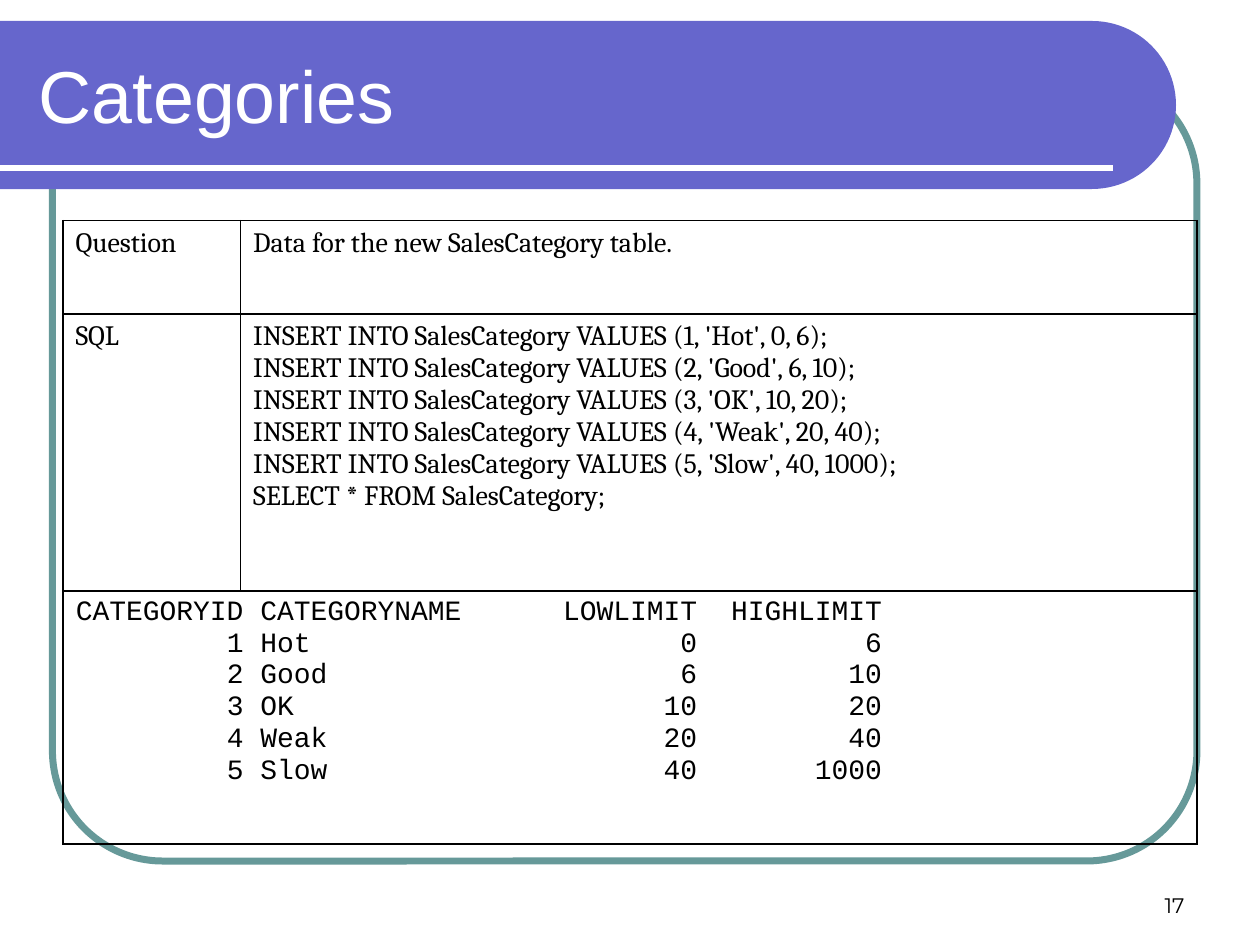
from math import cos, pi, sin

from lxml.etree import SubElement
from pptx import Presentation
from pptx.dml.color import RGBColor
from pptx.enum.shapes import MSO_CONNECTOR, MSO_SHAPE
from pptx.enum.text import MSO_ANCHOR, PP_ALIGN
from pptx.oxml.ns import qn
from pptx.util import Pt

BLACK = RGBColor(0x00, 0x00, 0x00)
WHITE = RGBColor(0xFF, 0xFF, 0xFF)
TEAL = RGBColor(0x66, 0x99, 0x99)
VIOLET = RGBColor(0x66, 0x66, 0xCC)

TITLE = {"name": "Arial", "size": Pt(42), "color": WHITE}
NUMBER = {"name": "Montserrat", "size": Pt(12), "color": BLACK}
PROSE = {"name": "Cambria", "size": Pt(16), "color": BLACK}
CODE = {"name": "Courier New", "size": Pt(16), "color": BLACK}
HANGING = 27
CODE_CHAR = 9.6  # width of one 16 pt Courier character

# Each result column: alignment and the character position of its edge
RESULT_STOPS = [("r", 10), ("l", 11), ("r", 37), ("r", 48)]
RESULT_ROWS = [
    ("CATEGORYID", "CATEGORYNAME", "LOWLIMIT", "HIGHLIMIT"),
    ("1", "Hot", "0", "6"),
    ("2", "Good", "6", "10"),
    ("3", "OK", "10", "20"),
    ("4", "Weak", "20", "40"),
    ("5", "Slow", "40", "1000"),
]
INSERTS = [
    f"INSERT INTO SalesCategory VALUES ({number}, '{name}', {low}, {high});"
    for number, name, low, high in RESULT_ROWS[1:]
]


class SlideBuilder:
    def __init__(self, slide):
        self.slide = slide
        self.shapes = slide.shapes

    def set_text(self, frame, lines, style, align=PP_ALIGN.LEFT):
        frame.text = "\n".join(lines)
        for paragraph in frame.paragraphs:
            paragraph.alignment = align
            for run in paragraph.runs:
                for key, value in style.items():
                    if key == "color":
                        run.font.color.rgb = value
                    else:
                        setattr(run.font, key, value)

    def frame(self, left, top, width, height, radius):
        border = self.shapes.add_shape(
            MSO_SHAPE.ROUNDED_RECTANGLE, Pt(left), Pt(top), Pt(width), Pt(height))
        border.adjustments[0] = radius
        border.shadow.inherit = False
        border.fill.background()
        border.line.color.rgb = TEAL
        border.line.width = Pt(4)

    def banner(self, top, bottom, right, steps=48):
        """Band from the left slide edge with a half-round right end."""
        radius = (bottom - top) / 2
        angles = [pi * (step / steps - 0.5) for step in range(steps + 1)]
        arc = [(right - radius + radius * cos(a), top + radius + radius * sin(a))
               for a in angles]
        outline = self.shapes.build_freeform(0, Pt(top))
        outline.add_line_segments(
            [(Pt(x), Pt(y)) for x, y in arc + [(0, bottom)]], close=True)
        band = outline.convert_to_shape()
        band.shadow.inherit = False
        band.fill.solid()
        band.fill.fore_color.rgb = VIOLET
        band.line.fill.background()

    def rule(self, y, right):
        line = self.shapes.add_connector(
            MSO_CONNECTOR.STRAIGHT, 0, Pt(y), Pt(right), Pt(y))
        line.line.color.rgb = WHITE
        line.line.width = Pt(3)
        SubElement(line._element.spPr, qn("a:effectLst"))

    def title(self, text, left, top, width, height):
        heading = self.shapes.title
        place = {"left": left, "top": top, "width": width, "height": height}
        for side, length in place.items():
            setattr(heading, side, Pt(length))
        self.set_text(heading.text_frame, [text], TITLE)
        heading.text_frame.vertical_anchor = MSO_ANCHOR.MIDDLE
        # Drawn above the banner
        self.shapes._spTree.append(heading._element)

    def page_number(self, text, left, top, width, height):
        box = self.shapes.add_textbox(Pt(left), Pt(top), Pt(width), Pt(height))
        box.text_frame.word_wrap = True
        box.text_frame.vertical_anchor = MSO_ANCHOR.BOTTOM
        self.set_text(box.text_frame, [text], NUMBER, PP_ALIGN.RIGHT)

    def table(self, left, top, widths, heights):
        graphic = self.shapes.add_table(
            len(heights), len(widths), Pt(left), Pt(top),
            Pt(sum(widths)), Pt(sum(heights)))
        grid = graphic.table
        grid.first_row = grid.horz_banding = False
        for column, width in zip(grid.columns, widths):
            column.width = Pt(width)
        for row, height in zip(grid.rows, heights):
            row.height = Pt(height)
        for cell in grid.iter_cells():
            self.borders(cell)
            cell.fill.background()
        return grid

    def borders(self, cell):
        properties = cell._tc.get_or_add_tcPr()
        for side in ("lnL", "lnR", "lnT", "lnB"):
            edge = SubElement(properties, qn(f"a:{side}"), w=str(Pt(1)))
            fill = SubElement(edge, qn("a:solidFill"))
            SubElement(fill, qn("a:srgbClr"), val=str(BLACK))

    def prose(self, cell, lines):
        self.set_text(cell.text_frame, lines, PROSE)
        for paragraph in cell.text_frame.paragraphs:
            properties = paragraph._p.get_or_add_pPr()
            properties.set("marL", str(Pt(HANGING)))
            properties.set("indent", str(-Pt(HANGING)))

    def query_result(self, cell, rows):
        """Set rows in columns by tab stops."""
        self.set_text(cell.text_frame, ["\t" + "\t".join(row) for row in rows], CODE)
        for paragraph in cell.text_frame.paragraphs:
            stops = SubElement(paragraph._p.get_or_add_pPr(), qn("a:tabLst"))
            for align, chars in RESULT_STOPS:
                SubElement(stops, qn("a:tab"),
                           pos=str(Pt(chars * CODE_CHAR)), algn=align)


def main():
    deck = Presentation()
    deck.slide_width, deck.slide_height = Pt(720), Pt(540)
    page = SlideBuilder(deck.slides.add_slide(deck.slide_layouts[5]))

    page.frame(30, 42, 654, 450, radius=0.14)
    page.banner(top=12, bottom=108, right=672)
    page.rule(y=96, right=636)
    page.page_number("17", 516, 492, 168, 36)
    page.title("Categories", 15, 18, 631.5, 72)

    grid = page.table(36, 126, widths=[101.5, 546.5], heights=[53.3, 158.4, 144.7])
    page.prose(grid.cell(0, 0), ["Question"])
    page.prose(grid.cell(0, 1), ["Data for the new SalesCategory table."])
    page.prose(grid.cell(1, 0), ["SQL"])
    page.prose(grid.cell(1, 1), INSERTS + ["SELECT * FROM SalesCategory;"])
    grid.cell(2, 0).merge(grid.cell(2, 1))
    page.query_result(grid.cell(2, 0), RESULT_ROWS)

    deck.save("out.pptx")


if __name__ == "__main__":
    main()
